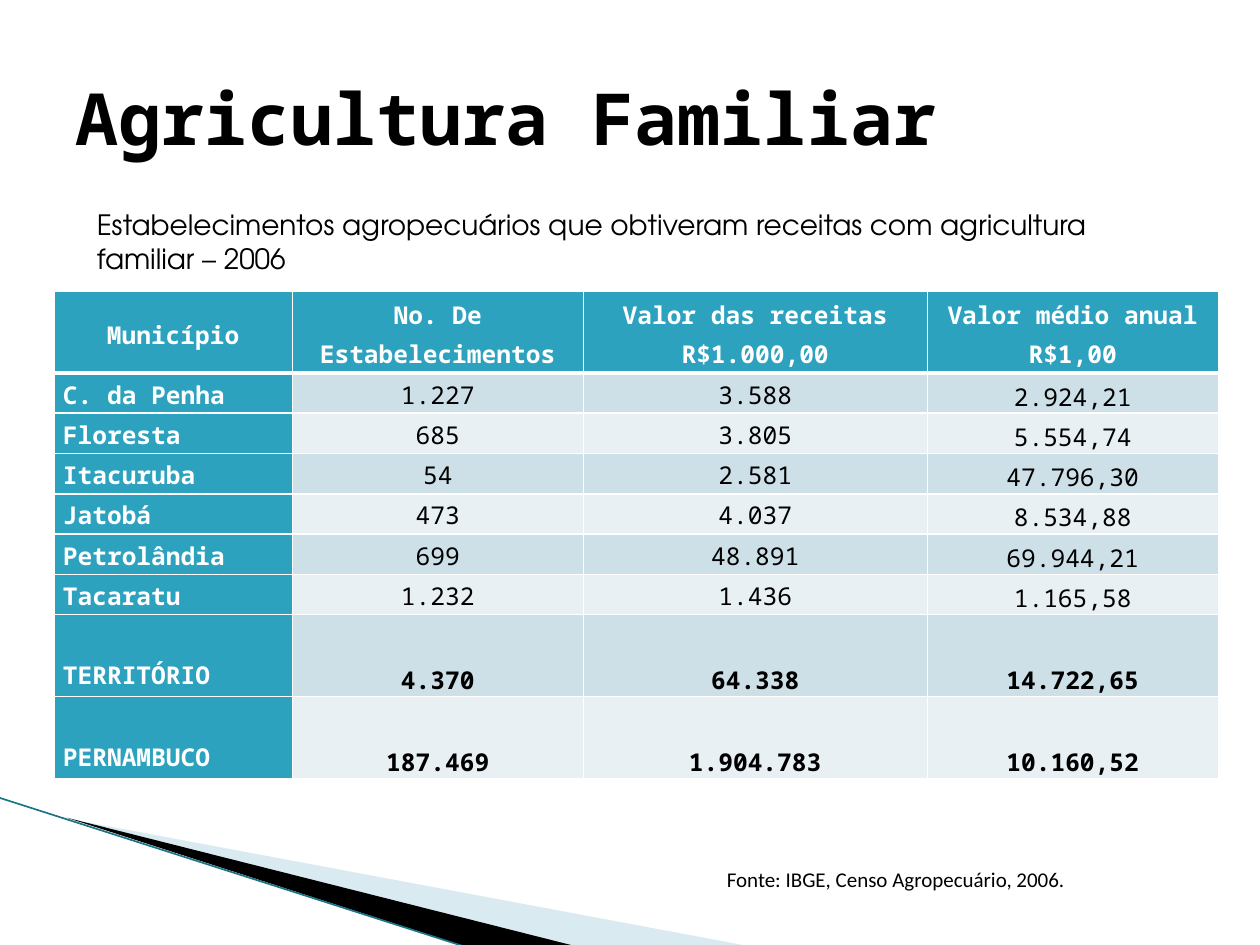
from lxml import etree
from pptx import Presentation
from pptx.dml.color import RGBColor
from pptx.enum.shapes import MSO_CONNECTOR
from pptx.enum.text import MSO_ANCHOR as ANCHOR, PP_ALIGN as ALIGN
from pptx.oxml.ns import qn
from pptx.util import Inches, Pt

MONO = "Noto Sans Mono"
WHITE, BLACK, TEAL = "FFFFFF", "000000", "2DA2BF"
BANDS = ("CDE0E8", "E8F0F4")
COL_WIDTHS = (1.89, 2.31, 2.73, 2.31)
ROW_HEIGHTS = (0.65,) + (0.32,) * 6 + (0.65,) * 2
HEADER = ("Município", "No. De Estabelecimentos",
          "Valor das receitas\nR$1.000,00", "Valor médio anual\nR$1,00")
MUNICIPALITIES = (
    ("C. da Penha", "1.227", "3.588", "2.924,21"),
    ("Floresta", "685", "3.805", "5.554,74"),
    ("Itacuruba", "54", "2.581", "47.796,30"),
    ("Jatobá", "473", "4.037", "8.534,88"),
    ("Petrolândia", "699", "48.891", "69.944,21"),
    ("Tacaratu", "1.232", "1.436", "1.165,58"),
)
TOTALS = (
    ("TERRITÓRIO", "4.370", "64.338", "14.722,65"),
    ("PERNAMBUCO", "187.469", "1.904.783", "10.160,52"),
)


def rgb(color):
    """Turn a hex string into a colour."""
    return RGBColor.from_string(color)


def style_font(font, name, size, color, bold=False):
    """Set the face, size, colour and weight of a font."""
    font.name, font.size, font.bold = name, Pt(size), bold
    font.color.rgb = rgb(color)


def add_text(slide, box, text, name, size, bold=False, anchor=ANCHOR.TOP):
    """Add a wrapped, left-aligned text box."""
    tf = slide.shapes.add_textbox(*map(Inches, box)).text_frame
    tf.word_wrap = True
    tf.vertical_anchor = anchor
    p = tf.paragraphs[0]
    p.text = text
    style_font(p.font, name, size, BLACK, bold)


def add_wedge(slide, points, color, alpha=100):
    """Add a filled polygon, optionally translucent."""
    start, *rest = [(Inches(x), Inches(y)) for x, y in points]
    builder = slide.shapes.build_freeform(*start)
    builder.add_line_segments(rest, close=True)
    sp = builder.convert_to_shape()
    sp.shadow.inherit = False
    sp.line.fill.background()
    sp.fill.solid()
    sp.fill.fore_color.rgb = rgb(color)
    if alpha < 100:
        clr = sp.fill._xPr.find(qn("a:solidFill"))[0]
        etree.SubElement(clr, qn("a:alpha")).set("val", str(alpha * 1000))


def add_line(slide, start, end, color, width):
    """Add a straight line without shadow."""
    line = slide.shapes.add_connector(
        MSO_CONNECTOR.STRAIGHT, *map(Inches, start + end))
    line.line.color.rgb = rgb(color)
    line.line.width = Pt(width)
    etree.SubElement(line._element.spPr, qn("a:effectLst"))


def set_borders(cell, top, bottom):
    """Draw white cell borders, with the given top and bottom widths."""
    tc_pr = cell._tc.get_or_add_tcPr()
    for side, width in (("L", 1), ("R", 1), ("T", top), ("B", bottom)):
        ln = etree.SubElement(tc_pr, qn(f"a:ln{side}"), w=str(Pt(width)))
        fill = etree.SubElement(ln, qn("a:solidFill"))
        etree.SubElement(fill, qn("a:srgbClr"), val=WHITE)


def fill_cell(cell, text, row, col):
    """Write and style one cell by its place in the table."""
    is_header, is_total = row == 0, row > len(MUNICIPALITIES)
    is_label = is_header or col == 0
    set_borders(cell, 3 if row == 1 else 1, 3 if is_header else 1)
    cell.fill.solid()
    cell.fill.fore_color.rgb = rgb(TEAL if is_label else BANDS[(row - 1) % 2])
    cell.margin_left = cell.margin_right = Inches(0.07)
    cell.margin_top = 0
    cell.margin_bottom = Inches(0.04 if is_total and col == 0 else 0)
    if is_header:
        cell.vertical_anchor = ANCHOR.MIDDLE
    else:
        at_bottom = is_total or col == 3
        cell.vertical_anchor = ANCHOR.BOTTOM if at_bottom else ANCHOR.TOP
    cell.text = text
    for p in cell.text_frame.paragraphs:
        p.alignment = ALIGN.CENTER if is_header or col else ALIGN.LEFT
        p.line_spacing = 1.15
        style_font(p.font, MONO, 14, WHITE if is_label else BLACK,
                   is_label or is_total)


def add_income_table(slide):
    """Add the table of farm income by municipality."""
    rows = (HEADER, *MUNICIPALITIES, *TOTALS)
    box = (0.43, 2.31, sum(COL_WIDTHS), sum(ROW_HEIGHTS))
    table = slide.shapes.add_table(
        len(rows), len(HEADER), *map(Inches, box)).table
    for column, width in zip(table.columns, COL_WIDTHS):
        column.width = Inches(width)
    for row, height in zip(table.rows, ROW_HEIGHTS):
        row.height = Inches(height)
    for r, values in enumerate(rows):
        for c, text in enumerate(values):
            fill_cell(table.cell(r, c), text, r, c)


def main():
    """Build the slide and save it."""
    prs = Presentation()
    prs.slide_width, prs.slide_height = Inches(10), Inches(7.5)
    slide = prs.slides.add_slide(prs.slide_layouts[6])
    add_wedge(slide, [(0.55, 6.5), (5.95, 7.51), (4.56, 7.51)], "A0CBDC", 40)
    add_wedge(slide, [(0.53, 6.49), (4.57, 7.51), (3.72, 7.52)], BLACK)
    add_line(slide, (-0.01, 6.33), (3.71, 7.52), "1B7487", 0.95)
    add_text(slide, (0.5, 0.3, 9, 1.25), "Agricultura Familiar", MONO, 41,
             bold=True, anchor=ANCHOR.MIDDLE)
    add_income_table(slide)
    add_text(slide, (0.67, 1.6, 8.82, 0.65),
             "Estabelecimentos agropecuários que obtiveram receitas com "
             "agricultura familiar – 2006", "TeX Gyre Adventor", 16)
    add_text(slide, (5.67, 6.83, 3.8, 0.31),
             "Fonte: IBGE, Censo Agropecuário, 2006.", "Calibri", 12)
    prs.save("out.pptx")


if __name__ == "__main__":
    main()
